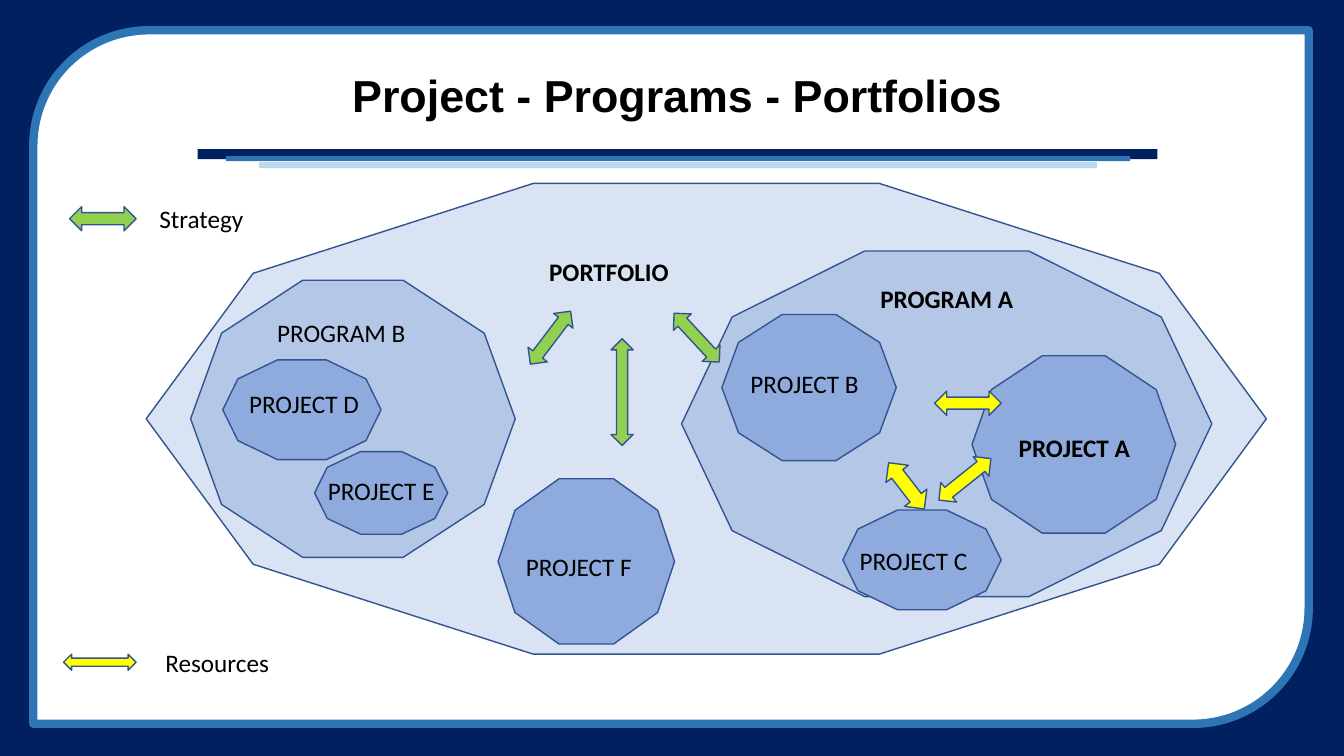
from pptx import Presentation
from pptx.dml.color import RGBColor
from pptx.enum.shapes import MSO_SHAPE
from pptx.enum.text import MSO_ANCHOR, MSO_AUTO_SIZE, PP_ALIGN
from pptx.util import Inches, Pt

NAVY = RGBColor(0x00, 0x20, 0x60)
BLUE = RGBColor(0x2E, 0x75, 0xB6)
SKY = RGBColor(0xBD, 0xD7, 0xEE)
WHITE = RGBColor(0xFF, 0xFF, 0xFF)
BLACK = RGBColor(0x00, 0x00, 0x00)
EDGE = RGBColor(0x32, 0x54, 0x91)
PALE = RGBColor(0xDA, 0xE3, 0xF3)
MID = RGBColor(0xB4, 0xC7, 0xE7)
DEEP = RGBColor(0x8F, 0xAA, 0xDC)
GREEN = RGBColor(0x92, 0xD0, 0x50)
YELLOW = RGBColor(0xFF, 0xFF, 0x00)

BARS = [
    ((1.96, 1.48, 9.52, 0.1), NAVY),
    ((2.24, 1.55, 8.97, 0.05), BLUE),
    ((2.57, 1.61, 8.31, 0.06), SKY),
]

GROUPS = [
    ("PORTFOLIO", PALE, (1.45, 1.82, 11.11, 4.67), (4.54, 2.49, 3), True),
    ("PROGRAM A", MID, (6.76, 2.49, 5.26, 3.43), (8.38, 2.76, 2.02), True),
    ("PROJECT A", DEEP, (9.64, 3.53, 2.02, 1.76), (9.98, 4.24, 1.35), True),
    ("PROJECT B", DEEP, (7.16, 3.12, 1.73, 1.45), (7.31, 3.61, 1.34), False),
    ("PROJECT C", DEEP, (8.36, 5.06, 1.57, 0.99), (8.41, 5.36, 1.3), False),
    ("PROGRAM B", MID, (1.89, 2.78, 3.22, 2.75), (2.55, 3.1, 1.67), False),
    ("PROJECT D", DEEP, (2.21, 3.57, 1.57, 0.99), (2.23, 3.8, 1.57), False),
    ("PROJECT E", DEEP, (3.12, 4.48, 1.32, 0.82), (3.12, 4.67, 1.32), False),
    ("PROJECT F", DEEP, (4.94, 4.75, 1.75, 1.64), (5.08, 5.42, 1.32), False),
]

ARROWS = [
    (YELLOW, (9.27, 3.88, 0.66, 0.24), 0),
    (YELLOW, (8.7, 4.68, 0.58, 0.28), 52.3),
    (YELLOW, (9.24, 4.63, 0.66, 0.25), 321.4),
    (YELLOW, (0.63, 6.49, 0.72, 0.16), 0),
    (GREEN, (6.58, 3.23, 0.66, 0.24), 47.2),
    (GREEN, (0.69, 2.05, 0.66, 0.24), 0),
    (GREEN, (5.13, 3.23, 0.66, 0.24), 307.2),
    (GREEN, (5.64, 3.78, 1.06, 0.22), 270),
]

KEYS = [("Resources", (1.59, 6.37, 2.03)), ("Strategy", (1.53, 1.97, 1.32))]


def write(frame, text, size=18, font="Calibri", bold=False,
          align=PP_ALIGN.CENTER, color=BLACK):
    frame.word_wrap = True
    para = frame.paragraphs[0]
    para.alignment = align
    run = para.add_run()
    run.text = text
    run.font.size = Pt(size)
    run.font.name = font
    run.font.bold = bold
    run.font.color.rgb = color


def draw(slide, kind, box, fill, line=None, width=1, turn=0):
    shape = slide.shapes.add_shape(kind, *map(Inches, box))
    shape.shadow.inherit = False
    shape.rotation = turn
    shape.fill.solid()
    shape.fill.fore_color.rgb = fill
    if line is None:
        shape.line.fill.background()
    else:
        shape.line.color.rgb = line
        shape.line.width = Pt(width)
    return shape


def label(slide, text, spot, **style):
    box = slide.shapes.add_textbox(*map(Inches, (*spot, 0.37)))
    frame = box.text_frame
    frame.margin_left = frame.margin_right = Inches(0.05)
    write(frame, text, **style)


def head(slide, text):
    title = slide.shapes.title
    title.left, title.top = Inches(1.96), Inches(0.49)
    title.width, title.height = Inches(9.52), Inches(0.97)
    title.element.getparent().append(title.element)
    frame = title.text_frame
    frame.auto_size = MSO_AUTO_SIZE.NONE
    frame.vertical_anchor = MSO_ANCHOR.MIDDLE
    write(frame, text, size=32, font="Arial", bold=True)
    frame.paragraphs[0].line_spacing = 0.9


def main():
    deck = Presentation()
    deck.slide_width, deck.slide_height = Inches(13.33), Inches(7.5)
    slide = deck.slides.add_slide(deck.slide_layouts[5])
    slide.background.fill.solid()
    slide.background.fill.fore_color.rgb = NAVY
    draw(slide, MSO_SHAPE.ROUND_2_DIAG_RECTANGLE, (0.33, 0.3, 12.65, 6.88),
         WHITE, line=BLUE, width=6, turn=180)
    for box, fill in BARS:
        draw(slide, MSO_SHAPE.RECTANGLE, box, fill)
    head(slide, "Project - Programs - Portfolios")
    for text, fill, box, spot, bold in GROUPS:
        draw(slide, MSO_SHAPE.DECAGON, box, fill, line=EDGE)
        label(slide, text, spot, bold=bold)
    for fill, box, turn in ARROWS:
        draw(slide, MSO_SHAPE.LEFT_RIGHT_ARROW, box, fill, line=EDGE, turn=turn)
    for text, spot in KEYS:
        label(slide, text, spot, align=PP_ALIGN.LEFT)
    deck.save("out.pptx")


if __name__ == "__main__":
    main()
